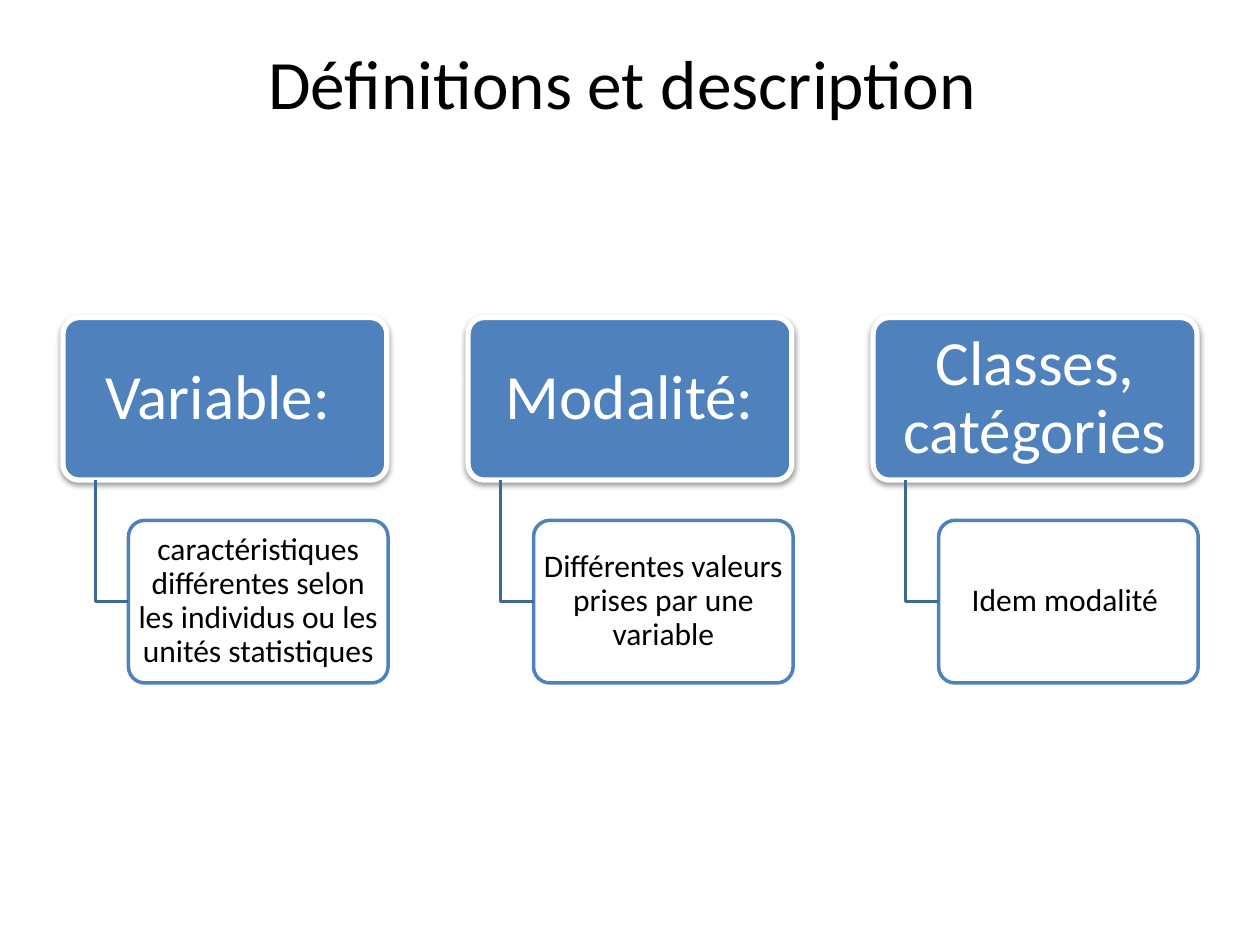
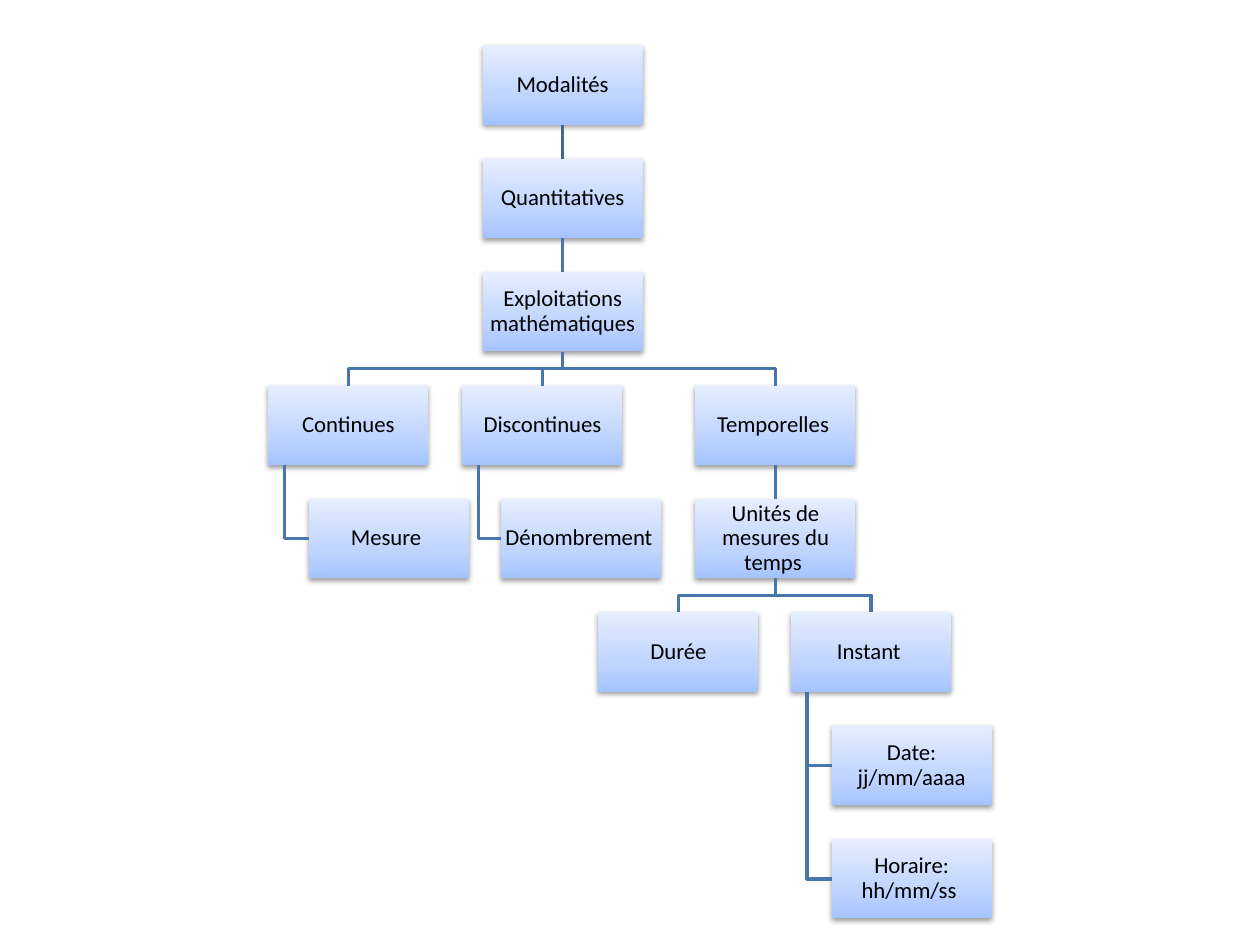
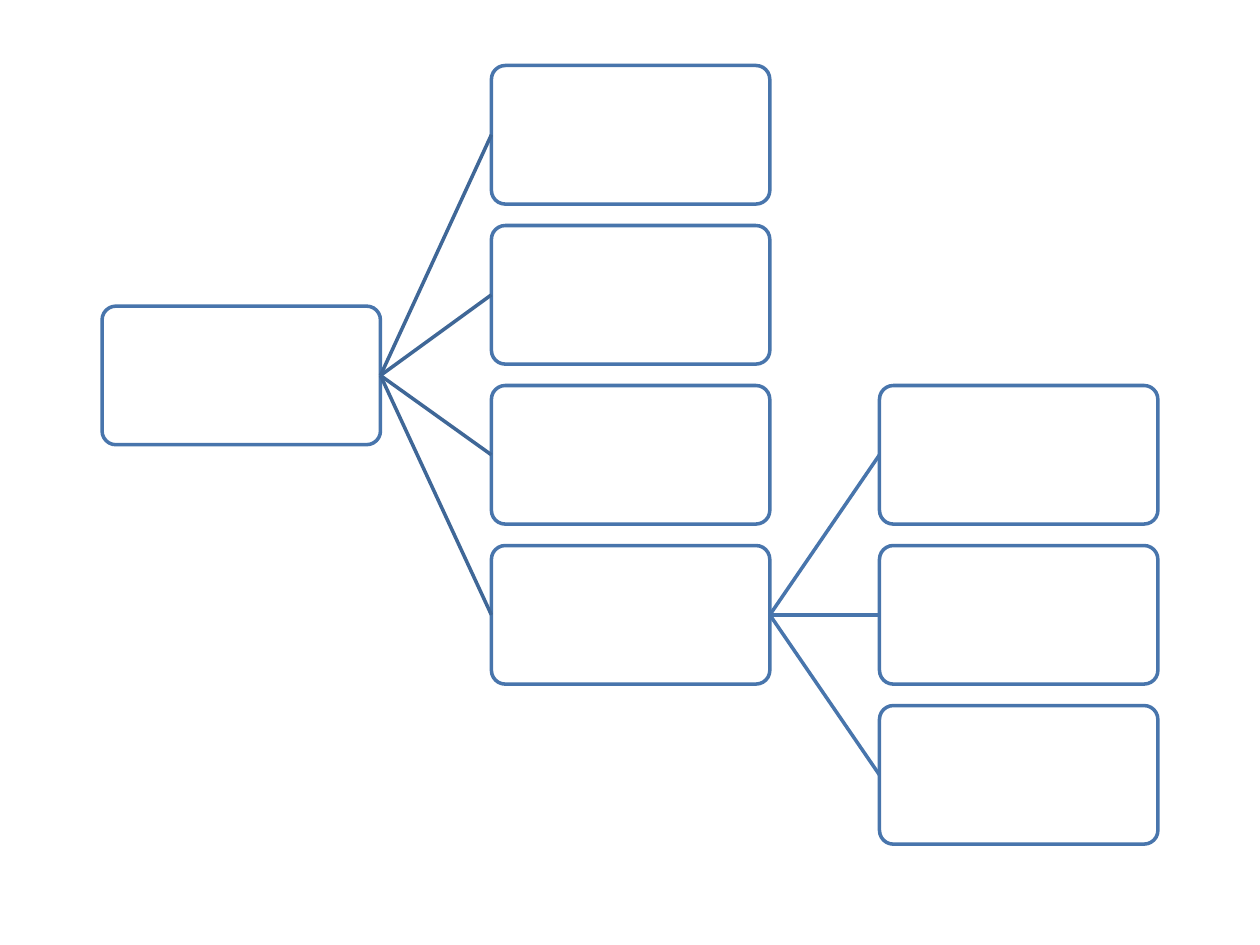
from copy import deepcopy

from lxml import etree
from pptx import Presentation
from pptx.dml.color import RGBColor
from pptx.enum.shapes import MSO_CONNECTOR, MSO_SHAPE
from pptx.enum.text import MSO_ANCHOR, PP_ALIGN
from pptx.oxml.ns import qn
from pptx.util import Inches, Pt

RECTANGLE = MSO_SHAPE.RECTANGLE
ROUNDED = MSO_SHAPE.ROUNDED_RECTANGLE
STRAIGHT = MSO_CONNECTOR.STRAIGHT
MIDDLE = MSO_ANCHOR.MIDDLE
CENTER = PP_ALIGN.CENTER
TOP, LEFT, BOTTOM, RIGHT = range(4)

WHITE = RGBColor(0xFF, 0xFF, 0xFF)
BLACK = RGBColor(0x00, 0x00, 0x00)
BLUE = RGBColor(0x4F, 0x81, 0xBD)
MEDIUM_BLUE = RGBColor(0x48, 0x75, 0xAC)
DARK_BLUE = RGBColor(0x3F, 0x67, 0x97)
GRADIENT = (
    (0, RGBColor(0xA4, 0xC4, 0xFF)),
    (0.35, RGBColor(0xBF, 0xD4, 0xFF)),
    (1, RGBColor(0xE6, 0xEE, 0xFF)),
)

TERM = {"size": 36, "color": WHITE, "insets": (0.07, 0.05)}
MEANING = {"size": 18, "color": BLACK, "insets": (0.02, 0.03)}
NODE = {"size": 13, "color": BLACK, "insets": (0.01, 0.01)}

DEFINITIONS = (
    ("Variable: ", "caractéristiques différentes selon les individus ou les unités statistiques"),
    ("Modalité:", "Différentes valeurs prises par une variable"),
    ("Classes, catégories", "Idem modalité "),
)

NODES = {
    "modalities": ("Modalités", 3.83, 0),
    "quantitative": ("Quantitatives", 3.83, 1),
    "uses": ("Exploitations mathématiques", 3.83, 2),
    "continuous": ("Continues", 2.13, 3),
    "measure": ("Mesure ", 2.45, 4),
    "discontinuous": ("Discontinues", 3.67, 3),
    "count": ("Dénombrement ", 3.98, 4),
    "temporal": ("Temporelles ", 5.52, 3),
    "units": ("Unités de mesures du temps ", 5.52, 4),
    "duration": ("Durée", 4.75, 5),
    "instant": ("Instant ", 6.28, 5),
    "date": ("Date: jj/mm/aaaa", 6.6, 6),
    "time": ("Horaire: hh/mm/ss ", 6.6, 7),
}
STEMS = (
    ("modalities", "quantitative", DARK_BLUE),
    ("quantitative", "uses", MEDIUM_BLUE),
    ("temporal", "units", MEDIUM_BLUE),
)
FORKS = {
    "uses": ("continuous", "discontinuous", "temporal"),
    "units": ("duration", "instant"),
}
HANGERS = {
    "continuous": ("measure",),
    "discontinuous": ("count",),
    "instant": ("date", "time"),
}


class Deck:
    font = "Calibri"
    line_width = Pt(2)

    def __init__(self):
        self.presentation = Presentation()
        self.presentation.slide_width = Inches(10)
        self.presentation.slide_height = Inches(7.5)
        self.slide = None

    def new_slide(self):
        self.slide = self.presentation.slides.add_slide(self.presentation.slide_layouts[6])

    def set_text(self, shape, text, size, color, insets=(0.1, 0.05), spacing=0.9):
        frame = shape.text_frame
        horizontal, vertical = map(Inches, insets)
        frame_format = {
            "word_wrap": True,
            "vertical_anchor": MIDDLE,
            "margin_left": horizontal,
            "margin_right": horizontal,
            "margin_top": vertical,
            "margin_bottom": vertical,
        }
        for name, value in frame_format.items():
            setattr(frame, name, value)
        paragraph = frame.paragraphs[0]
        paragraph.alignment = CENTER
        paragraph.line_spacing = spacing
        run = paragraph.add_run()
        run.text = text
        for name, value in {"name": self.font, "size": Pt(size)}.items():
            setattr(run.font, name, value)
        run.font.color.rgb = color

    def title(self, text):
        box = self.slide.shapes.add_textbox(Inches(0.5), Inches(0.3), Inches(9), Inches(0.69))
        self.set_text(box, text, 39.6, BLACK, spacing=1)

    def box(self, kind, left, top, width, height, fill=None, line=None, line_width=2):
        shape = self.slide.shapes.add_shape(kind, *map(Inches, (left, top, width, height)))
        shape.shadow.inherit = False
        if kind == ROUNDED:
            shape.adjustments[0] = 0.1
        if fill is None:
            self.shade(shape)
        else:
            shape.fill.solid()
            shape.fill.fore_color.rgb = fill
        if line is None:
            shape.line.fill.background()
        else:
            shape.line.color.rgb = line
            shape.line.width = Pt(line_width)
        return shape

    def shade(self, shape):
        shape.fill.gradient()
        shape.fill.gradient_angle = 90
        stops = shape._element.spPr.find(qn("a:gradFill")).find(qn("a:gsLst"))
        stops.insert(1, deepcopy(stops[0]))
        for stop, (position, color) in zip(shape.fill.gradient_stops, GRADIENT):
            stop.position = position
            stop.color.rgb = color

    def cast_shadow(self, shape):
        effects = shape._element.spPr.find(qn("a:effectLst"))
        shadow = etree.SubElement(
            effects, qn("a:outerShdw"), blurRad="40000", dist="20000", dir="5400000", rotWithShape="0"
        )
        color = etree.SubElement(shadow, qn("a:srgbClr"), val=str(BLACK))
        etree.SubElement(color, qn("a:alpha"), val="38000")

    def link(self, start, start_side, end, end_side, color):
        connector = self.slide.shapes.add_connector(STRAIGHT, 0, 0, 0, 0)
        connector.begin_connect(start, start_side)
        connector.end_connect(end, end_side)
        connector.line.color.rgb = color
        connector.line.width = self.line_width
        etree.SubElement(connector._element.spPr, qn("a:effectLst"))

    def bent_line(self, points, color):
        builder = self.slide.shapes.build_freeform(*points[0])
        builder.add_line_segments(points[1:], close=False)
        shape = builder.convert_to_shape()
        shape.shadow.inherit = False
        shape.fill.background()
        shape.line.color.rgb = color
        shape.line.width = self.line_width

    def hang(self, parent, child, color):
        x = parent.left + parent.width // 10
        y = child.top + child.height // 2
        self.bent_line([(x, parent.top + parent.height), (x, y), (child.left, y)], color)

    def fork(self, parent, child, color):
        start_x = parent.left + parent.width // 2
        end_x = child.left + child.width // 2
        bottom = parent.top + parent.height
        middle = (bottom + child.top) // 2
        self.bent_line([(start_x, bottom), (start_x, middle), (end_x, middle), (end_x, child.top)], color)


def build_definitions(deck):
    deck.new_slide()
    deck.title("Définitions et description ")
    step = (9 - 2.57) / 2
    for column, (term, meaning) in enumerate(DEFINITIONS):
        left = 0.5 + column * step
        heading = deck.box(ROUNDED, left, 2.52, 2.57, 1.29, BLUE, WHITE, 3)
        deck.cast_shadow(heading)
        deck.set_text(heading, term, **TERM)
        detail = deck.box(ROUNDED, left + 0.52, 4.13, 2.06, 1.29, WHITE, BLUE)
        deck.set_text(detail, meaning, **MEANING)
        deck.hang(heading, detail, DARK_BLUE)


def build_modality_tree(deck):
    deck.new_slide()
    boxes = {}
    for name, (text, left, row) in NODES.items():
        boxes[name] = deck.box(RECTANGLE, left, 0.36 + 0.9 * row, 1.27, 0.63)
        deck.cast_shadow(boxes[name])
        deck.set_text(boxes[name], text, **NODE)
    for parent, child, color in STEMS:
        deck.link(boxes[parent], BOTTOM, boxes[child], TOP, color)
    for draw, branches in ((deck.fork, FORKS), (deck.hang, HANGERS)):
        for parent, children in branches.items():
            for child in children:
                draw(boxes[parent], boxes[child], MEDIUM_BLUE)


def build_empty_tree(deck):
    deck.new_slide()

    def column(left, top, count):
        return [
            deck.box(ROUNDED, left, top + 1.27 * row, 2.21, 1.1, WHITE, MEDIUM_BLUE)
            for row in range(count)
        ]

    root = column(0.81, 2.43, 1)[0]
    branches = column(3.9, 0.52, 4)
    leaves = column(6.98, 3.06, 3)
    for parent, children, color in ((root, branches, DARK_BLUE), (branches[-1], leaves, MEDIUM_BLUE)):
        for child in children:
            deck.link(parent, RIGHT, child, LEFT, color)


def main():
    deck = Deck()
    build_definitions(deck)
    build_modality_tree(deck)
    build_empty_tree(deck)
    deck.presentation.save("out.pptx")


if __name__ == "__main__":
    main()
